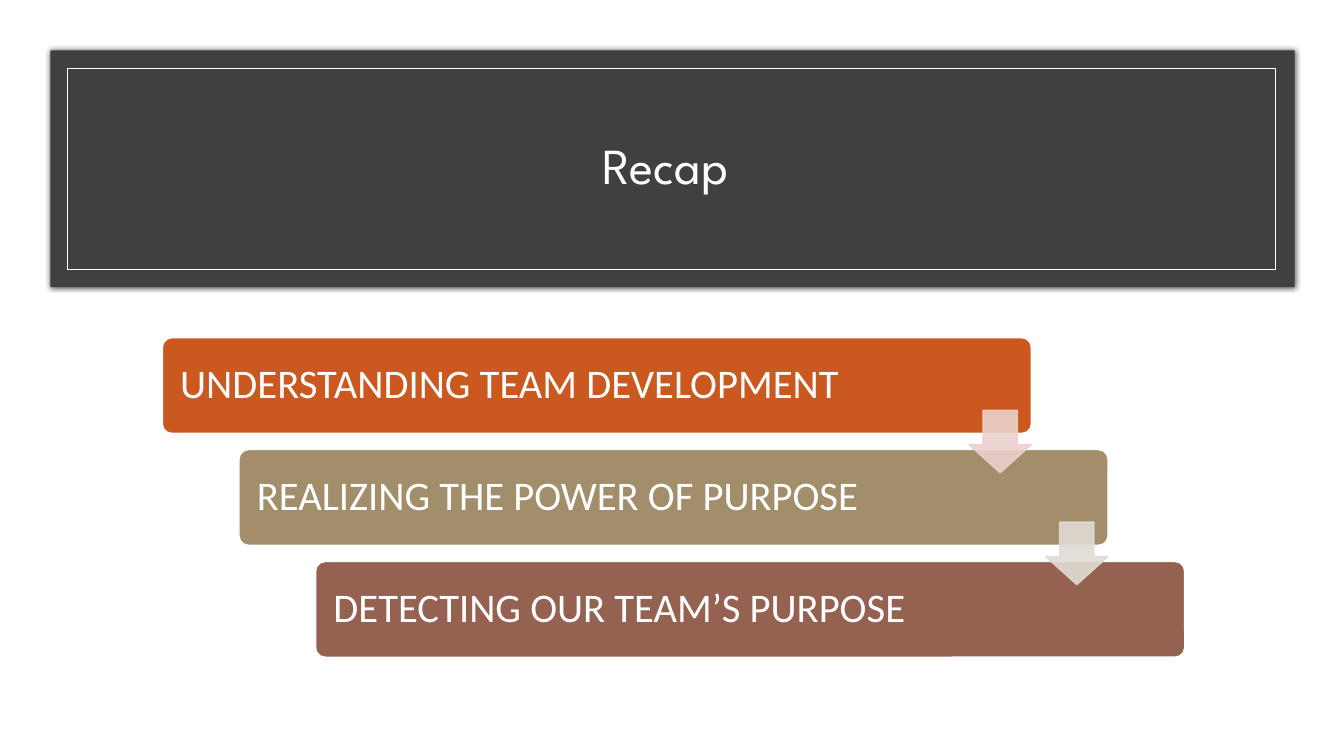
from lxml import etree
from pptx import Presentation
from pptx import util as u
from pptx.dml.color import RGBColor
from pptx.enum import shapes, text
from pptx.oxml.ns import qn

EMU_PER_PX = 9144  # 100 px to the inch
COLORS = {
    "white": "FFFFFF", "banner": "404040", "shadow": "000000",
    "orange": "CB581F", "sand": "A28E6A", "brown": "956251",
    "pink": "ECD1CD", "stone": "E0DBD4",
}


def px(n):
    return u.Emu(n * EMU_PER_PX)


def rgb(name):
    return RGBColor.from_string(COLORS[name])


def write(tf, words, *, font, size, color="white", align="LEFT", inset=10, after=0):
    tf.word_wrap = True
    tf.vertical_anchor = text.MSO_ANCHOR.MIDDLE
    tf.margin_left = tf.margin_right = px(inset)
    tf.margin_top = tf.margin_bottom = px(5)
    p = tf.paragraphs[0]
    p.alignment = getattr(text.PP_ALIGN, align)
    p.line_spacing = 0.9
    p.space_before = u.Pt(0)
    p.space_after = u.Pt(after)
    r = p.add_run()
    r.text = words
    r.font.name, r.font.size = font, u.Pt(size)
    r.font.color.rgb = rgb(color)


class Deck:
    heading_font, body_font = "League Spartan", "Calibri"

    def __init__(self, width, height):
        self.prs = Presentation()
        self.prs.slide_width, self.prs.slide_height = px(width), px(height)
        self.s = self.prs.slides.add_slide(self.prs.slide_layouts[5])
        fill = self.s.background.fill
        fill.solid()
        fill.fore_color.rgb = rgb("white")

    def shape(self, kind, box, fill=None, line=None, width=1, adj=(), alpha=None):
        sp = self.s.shapes.add_shape(getattr(shapes.MSO_SHAPE, kind), *map(px, box))
        sp.shadow.inherit = False
        for i, value in enumerate(adj):
            sp.adjustments[i] = value
        for target, color in ((sp.fill, fill), (sp.line.fill, line)):
            if color is None:
                target.background()
            else:
                target.solid()
                target.fore_color.rgb = rgb(color)
        if line:
            sp.line.width = u.Pt(width)
        if alpha:
            for clr in sp.element.spPr.iter(qn("a:srgbClr")):
                etree.SubElement(clr, qn("a:alpha"), val=str(alpha * 1000))
        return sp

    def cast_shadow(self, sp, blur, alpha):
        effects = sp.element.spPr.find(qn("a:effectLst"))
        shadow = etree.SubElement(effects, qn("a:outerShdw"),
                                  blurRad=str(u.Pt(blur)), dist="0", dir="0")
        clr = etree.SubElement(shadow, qn("a:srgbClr"), val=COLORS["shadow"])
        etree.SubElement(clr, qn("a:alpha"), val=str(alpha * 1000))

    def title(self, words, box, above):
        sp = self.s.shapes.title
        sp.left, sp.top, sp.width, sp.height = map(px, box)
        write(sp.text_frame, words, font=self.heading_font, size=36, align="CENTER")
        above.element.addnext(sp.element)

    def bar(self, words, box, color):
        sp = self.shape("ROUNDED_RECTANGLE", box, color, "white", adj=[0.1])
        write(sp.text_frame, words, font=self.body_font, size=29, inset=15, after=10)

    def arrow(self, box, color):
        self.shape("DOWN_ARROW", box, color, color, adj=[0.55, 0.45], alpha=90)


def main():
    deck = Deck(1333, 750)

    # Title banner with an inner frame
    banner = deck.shape("RECTANGLE", (50, 50, 1234, 235), "banner")
    deck.cast_shadow(banner, blur=4, alpha=66)
    frame = deck.shape("RECTANGLE", (67, 68, 1198, 199), line="white", width=0.5)
    deck.title("Recap ", (116, 92, 1100, 150), above=frame)

    # Staircase of steps
    left, top, dx, dy = 161, 335, 76, 111
    steps = [
        ("UNDERSTANDING TEAM DEVELOPMENT", "orange"),
        ("REALIZING THE POWER OF PURPOSE", "sand"),
        ("DETECTING OUR TEAM’S PURPOSE", "brown"),
    ]
    for i, (words, color) in enumerate(steps):
        deck.bar(words, (left + i * dx, top + i * dy, 862, 95), color)

    # Arrows from each step to the next
    for i, color in enumerate(["pink", "stone"]):
        deck.arrow((left + 800 + i * dx, top + 72 + i * dy, 62, 62), color)

    deck.prs.save("out.pptx")


if __name__ == "__main__":
    main()
